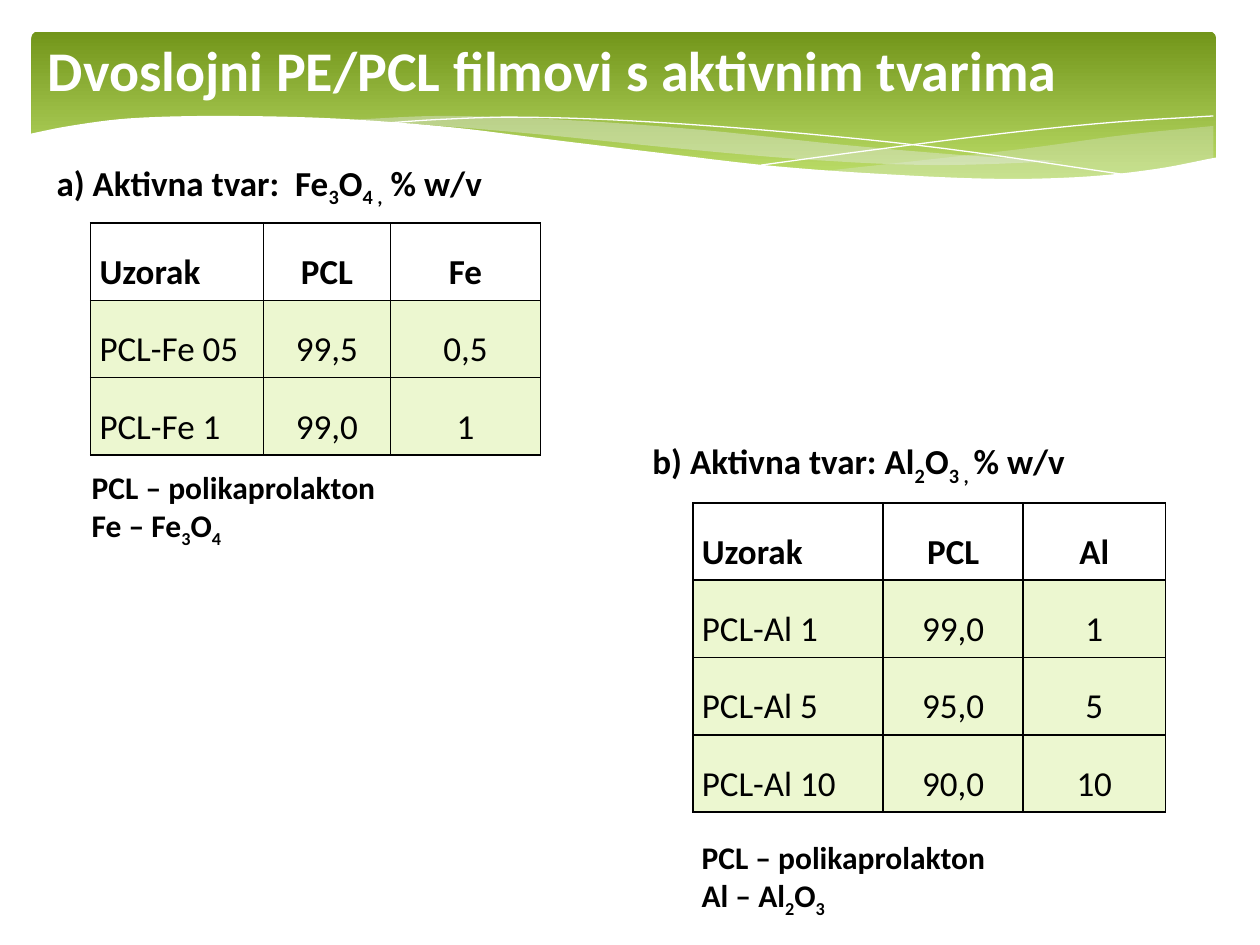
from lxml import etree
from pptx import Presentation
from pptx import util as u
from pptx.dml.color import RGBColor
from pptx.enum import shapes, text
from pptx.oxml.ns import qn

WIDTH, HEIGHT = 10, 7.5
FONT = "Calibri"
WHITE, BLACK, PALE_GREEN, MIST = "FFFFFF", "000000", "ECF7D0", "E7ECED"
ROW_HEIGHT = 0.614

# Text between underscores is set as subscript.
TITLE = "Dvoslojni PE/PCL filmovi s aktivnim tvarima"
SECTIONS = [
    {
        "heading": ("a) Aktivna tvar:  Fe_3_O_4 ,_ % w/v", (0.35, 1.23, 3.78, 0.44)),
        "origin": (0.72, 1.77),
        "columns": (1.37, 1.01, 1.19),
        "rows": [("Uzorak", "PCL", "Fe"),
                 ("PCL-Fe 05", "99,5", "0,5"),
                 ("PCL-Fe 1", "99,0", "1")],
        "legend": (("PCL – polikaprolakton", "Fe – Fe_3_O_4_"), (0.63, 3.68, 2.87, 0.71)),
    },
    {
        "heading": ("b) Aktivna tvar: Al_2_O_3 , _% w/v", (5.08, 3.44, 4.49, 0.44)),
        "origin": (5.5, 3.99),
        "columns": (1.51, 1.11, 1.13),
        "rows": [("Uzorak", "PCL", "Al"),
                 ("PCL-Al 1", "99,0", "1"),
                 ("PCL-Al 5", "95,0", "5"),
                 ("PCL-Al 10", "90,0", "10")],
        "legend": (("PCL – polikaprolakton", "Al – Al_2_O_3_"), (5.47, 6.62, 2.87, 0.71)),
    },
]

# Each wave is a list of edges; every edge is a smooth curve through its knots.
RIGHT_RIBBON = [
    [(9.63, 1), (8.94, 1.07), (8.21, 1.17), (7.43, 1.26), (6.52, 1.36)],
    [(6.52, 1.36), (7.08, 1.4), (7.7, 1.42), (8.33, 1.42), (8.94, 1.38), (9.63, 1.26)],
]
MIDDLE_RIBBON = [
    [(8.43, 1.28), (7.63, 1.23), (6.7, 1.15), (5.56, 1.03), (4.46, 0.95), (3.5, 0.92),
     (2.8, 0.95)],
    [(2.8, 0.95), (3.51, 1), (4.32, 1.07), (5.4, 1.18), (6.46, 1.27), (7.43, 1.31),
     (8.43, 1.28)],
]
FALLING_LINE = [[(3.03, 0.98), (3.46, 0.95), (4.09, 0.93), (5.02, 0.96), (6.26, 1.05),
                 (7.5, 1.18), (8.95, 1.39)]]
RISING_LINE = [[(6.04, 1.31), (6.85, 1.2), (7.95, 1.06), (8.84, 0.97), (9.63, 0.92)]]
WHITE_WAVE = [
    [(9.65, 1.25), (9.18, 1.34), (8.64, 1.4), (7.98, 1.42), (7.16, 1.39), (6.16, 1.32),
     (5.21, 1.21), (4.39, 1.11), (3.58, 1.01), (2.65, 0.94), (1.72, 0.92), (1.02, 0.94),
     (0.55, 1), (0.2, 1.07)],
    [(0.2, 1.07), (0.2, 1.7)],
    [(0.2, 1.7), (9.65, 1.7)],
]


def color(value):
    return RGBColor.from_string(value)


def inches(values):
    return [u.Inches(value) for value in values]


def write(frame, lines, size=20, fill=BLACK, bold=True, align=text.PP_ALIGN.LEFT,
          anchor=text.MSO_ANCHOR.MIDDLE, spacing=None):
    frame.word_wrap = True
    frame.vertical_anchor = anchor
    for index, line in enumerate(lines):
        paragraph = frame.add_paragraph() if index else frame.paragraphs[0]
        paragraph.alignment = align
        paragraph.line_spacing = spacing
        for part, content in enumerate(line.split("_")):
            if not content:
                continue
            run = paragraph.add_run()
            run.text = content
            run.font.name, run.font.size, run.font.bold = FONT, u.Pt(size), bold
            run.font.color.rgb = color(fill)
            if part % 2:
                run.font._element.set("baseline", "-25000")


def smooth(knots, steps=6):
    """Sample a cubic Hermite curve, with y as a function of x, through the knots."""
    if len(knots) == 2:
        return knots
    last = len(knots) - 1
    slopes = []
    for i in range(len(knots)):
        (x0, y0), (x1, y1) = knots[max(i - 1, 0)], knots[min(i + 1, last)]
        slopes.append((y1 - y0) / (x1 - x0))
    points = [knots[0]]
    for i in range(last):
        (x0, y0), (x1, y1) = knots[i], knots[i + 1]
        span = x1 - x0
        for step in range(1, steps + 1):
            t = step / steps
            ease = t * t * (3 - 2 * t)
            bend = t * (1 - t) ** 2 * slopes[i] - t * t * (1 - t) * slopes[i + 1]
            points.append((x0 + span * t, y0 + (y1 - y0) * ease + span * bend))
    return points


def add_wave(slide, edges, fill=None, opacity=100, line=None):
    points = [tuple(inches(point)) for edge in edges for point in smooth(edge)]
    builder = slide.shapes.build_freeform(*points[0])
    builder.add_line_segments(points[1:], close=fill is not None)
    wave = builder.convert_to_shape()
    wave.shadow.inherit = False
    if fill:
        wave.fill.solid()
        wave.fill.fore_color.rgb = color(fill)
        solid = wave.fill._xPr.find(qn("a:solidFill"))
        etree.SubElement(solid[0], qn("a:alpha"), val=str(opacity * 1000))
    else:
        wave.fill.background()
    if line:
        wave.line.color.rgb = color(line)
        wave.line.width = u.Pt(0)
    else:
        wave.line.fill.background()


def add_banner(slide):
    banner = slide.shapes.add_shape(shapes.MSO_SHAPE.ROUNDED_RECTANGLE,
                                    *inches((0.25, 0.25, 9.4, 1.45)))
    banner.adjustments[0] = 0.034
    banner.shadow.inherit = False
    banner.line.fill.background()
    banner.fill.gradient()
    banner.fill.gradient_angle = 270
    stops = [(0, "72951A"), (0.9, "C5E672")]
    for stop, (position, value) in zip(banner.fill.gradient_stops, stops):
        stop.position = position
        stop.color.rgb = color(value)
    add_wave(slide, RIGHT_RIBBON, fill=MIST, opacity=29)
    add_wave(slide, MIDDLE_RIBBON, fill=MIST, opacity=40)
    add_wave(slide, FALLING_LINE, line=WHITE)
    add_wave(slide, RISING_LINE, line=WHITE)
    add_wave(slide, WHITE_WAVE, fill=WHITE)


def add_title(slide):
    title = slide.shapes.title
    title.left, title.top, title.width, title.height = inches((0.28, 0.21, 9.37, 0.68))
    title.text_frame.auto_size = text.MSO_AUTO_SIZE.NONE
    write(title.text_frame, [TITLE], size=32, fill=WHITE)
    slide.shapes._spTree.append(title._element)  # in front of the banner


def add_text(slide, box, lines, **options):
    write(slide.shapes.add_textbox(*inches(box)).text_frame, lines, **options)


def add_borders(cell):
    properties = cell._tc.get_or_add_tcPr()
    for side in ("lnL", "lnR", "lnT", "lnB"):
        border = etree.SubElement(properties, qn("a:" + side), w=str(u.Pt(1)))
        solid = etree.SubElement(border, qn("a:solidFill"))
        etree.SubElement(solid, qn("a:srgbClr"), val=BLACK)


def add_sample_table(slide, origin, columns, rows):
    size = (sum(columns), ROW_HEIGHT * len(rows))
    table = slide.shapes.add_table(len(rows), len(columns), *inches(origin + size)).table
    for column, width in zip(table.columns, columns):
        column.width = u.Inches(width)
    for r, row in enumerate(rows):
        table.rows[r].height = u.Inches(ROW_HEIGHT)
        for c, content in enumerate(row):
            cell = table.cell(r, c)
            cell.margin_left = cell.margin_right = u.Inches(0.07)
            cell.margin_top = cell.margin_bottom = u.Inches(0.02)
            cell.vertical_anchor = text.MSO_ANCHOR.MIDDLE
            add_borders(cell)
            if r:
                cell.fill.solid()
                cell.fill.fore_color.rgb = color(PALE_GREEN)
            else:
                cell.fill.background()
            align = text.PP_ALIGN.CENTER if c else text.PP_ALIGN.LEFT
            write(cell.text_frame, [content], bold=r == 0, align=align, spacing=1.5)


def main():
    presentation = Presentation()
    presentation.slide_width, presentation.slide_height = inches((WIDTH, HEIGHT))
    slide = presentation.slides.add_slide(presentation.slide_layouts.get_by_name("Title Only"))
    add_banner(slide)
    add_title(slide)
    for section in SECTIONS:
        heading, heading_box = section["heading"]
        legend, legend_box = section["legend"]
        add_text(slide, heading_box, [heading], anchor=text.MSO_ANCHOR.TOP)
        add_sample_table(slide, section["origin"], section["columns"], section["rows"])
        add_text(slide, legend_box, legend, size=18, align=text.PP_ALIGN.JUSTIFY)
    presentation.save("out.pptx")


if __name__ == "__main__":
    main()
